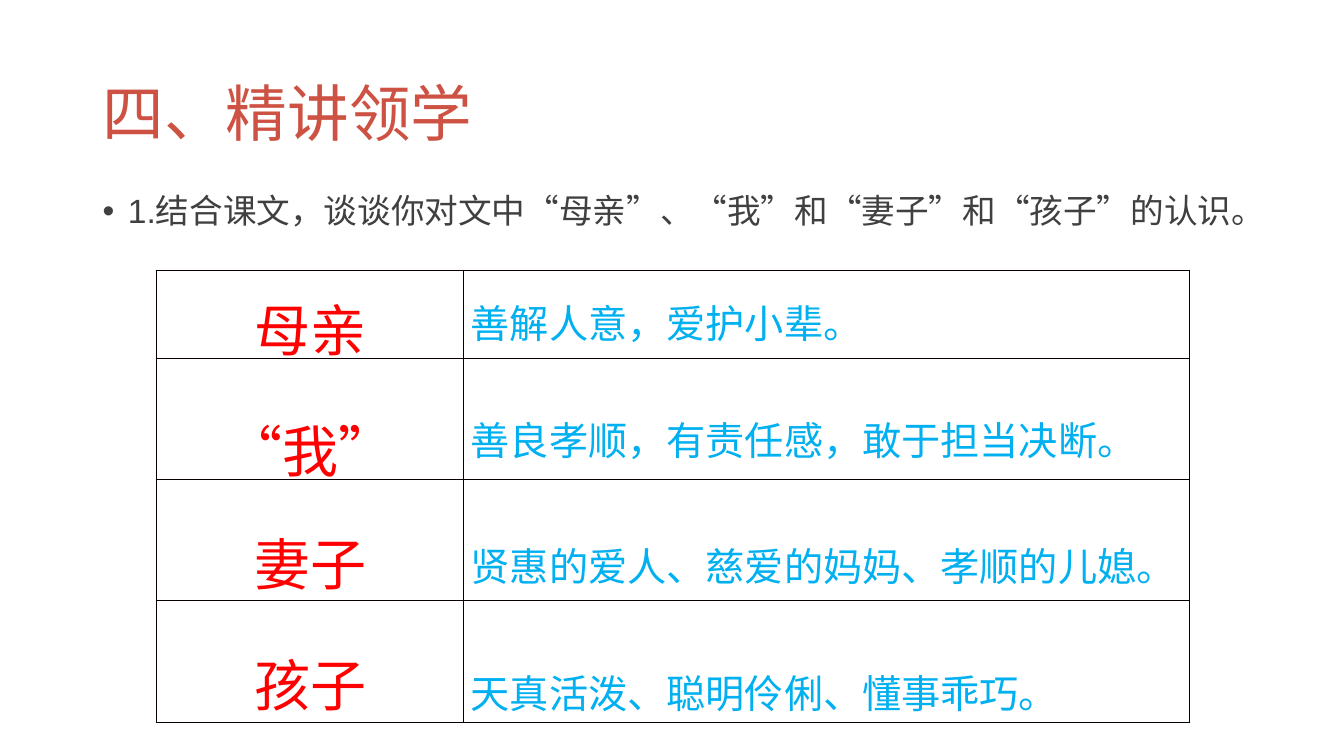
from lxml import etree
from pptx import Presentation
from pptx.dml.color import RGBColor
from pptx.enum.text import MSO_ANCHOR, PP_ALIGN
from pptx.oxml.ns import qn
from pptx.util import Inches, Pt

TITLE_RED = RGBColor(0xCE, 0x52, 0x43)
BODY_GRAY = RGBColor(0x40, 0x40, 0x40)
NAME_RED = RGBColor(0xFF, 0x00, 0x00)
TRAIT_BLUE = RGBColor(0x00, 0xB0, 0xF0)
BORDER_COLOR = "080000"

LATIN_FONT = "Arial"
CHINESE_FONT = "Noto Sans CJK SC"

COLUMN_WIDTHS = (3.05, 7.2)
# row height, character, its line spacing, traits, their line spacing
CHARACTERS = (
    (0.88, "母亲", 1.2, "善解人意，爱护小辈。", 1.4),
    (1.2, "“我”", 1.6, "善良孝顺，有责任感，敢于担当决断。", 1.9),
    (1.2, "妻子", 1.5, "贤惠的爱人、慈爱的妈妈、孝顺的儿媳。", 2.0),
    (1.21, "孩子", 1.5, "天真活泼、聪明伶俐、懂事乖巧。", 2.1),
)


def write(paragraph, text, size, color, line_spacing, font=CHINESE_FONT):
    paragraph.line_spacing = line_spacing
    run = paragraph.add_run()
    run.text = text
    run.font.name = font
    run.font.size = Pt(size)
    run.font.color.rgb = color
    properties = run.font._element
    properties.set("lang", "zh-CN")
    east_asian = etree.SubElement(properties, qn("a:ea"))
    east_asian.set("typeface", CHINESE_FONT)


def add_text_box(slide, top, height, anchor):
    box = slide.shapes.add_textbox(Inches(0.92), Inches(top), Inches(11.5), Inches(height))
    frame = box.text_frame
    frame.word_wrap = True
    frame.vertical_anchor = anchor
    return frame.paragraphs[0]


def add_bullet(paragraph):
    properties = paragraph._p.get_or_add_pPr()
    properties.set("marL", str(Inches(0.25)))
    properties.set("indent", str(-Inches(0.25)))
    etree.SubElement(properties, qn("a:buFont")).set("typeface", LATIN_FONT)
    etree.SubElement(properties, qn("a:buChar")).set("char", "•")


def add_borders(cell):
    properties = cell._tc.get_or_add_tcPr()
    for position, side in enumerate(("lnL", "lnR", "lnT", "lnB")):
        line = etree.Element(qn(f"a:{side}"), w=str(Pt(1)))
        fill = etree.SubElement(line, qn("a:solidFill"))
        etree.SubElement(fill, qn("a:srgbClr")).set("val", BORDER_COLOR)
        properties.insert(position, line)


def fill_cell(cell, text, size, color, line_spacing, alignment):
    cell.fill.background()
    cell.margin_left = cell.margin_right = Inches(0.07)
    cell.margin_top = cell.margin_bottom = 0
    add_borders(cell)
    paragraph = cell.text_frame.paragraphs[0]
    paragraph.alignment = alignment
    write(paragraph, text, size, color, line_spacing)


def add_character_table(slide):
    frame = slide.shapes.add_table(
        len(CHARACTERS), len(COLUMN_WIDTHS),
        Inches(1.55), Inches(2.68), Inches(10.25), Inches(4.49))
    table = frame.table
    table.first_row = table.horz_banding = False
    for column, width in zip(table.columns, COLUMN_WIDTHS):
        column.width = Inches(width)
    for index, (height, name, name_spacing, traits, traits_spacing) in enumerate(CHARACTERS):
        table.rows[index].height = Inches(height)
        fill_cell(table.cell(index, 0), name, 40, NAME_RED, name_spacing, PP_ALIGN.CENTER)
        fill_cell(table.cell(index, 1), traits, 28, TRAIT_BLUE, traits_spacing, PP_ALIGN.LEFT)


def main():
    presentation = Presentation()
    presentation.slide_width = Inches(13.33)
    presentation.slide_height = Inches(7.5)
    slide = presentation.slides.add_slide(presentation.slide_layouts[6])

    title = add_text_box(slide, 0.31, 1.45, MSO_ANCHOR.MIDDLE)
    write(title, "四、精讲领学", 44, TITLE_RED, 1.2, LATIN_FONT)

    question = add_text_box(slide, 1.76, 4.76, MSO_ANCHOR.TOP)
    add_bullet(question)
    write(question, "1.结合课文，谈谈你对文中“母亲”、“我”和“妻子”和“孩子”的认识。",
          24, BODY_GRAY, 1.2, LATIN_FONT)

    add_character_table(slide)
    presentation.save("out.pptx")


if __name__ == "__main__":
    main()
